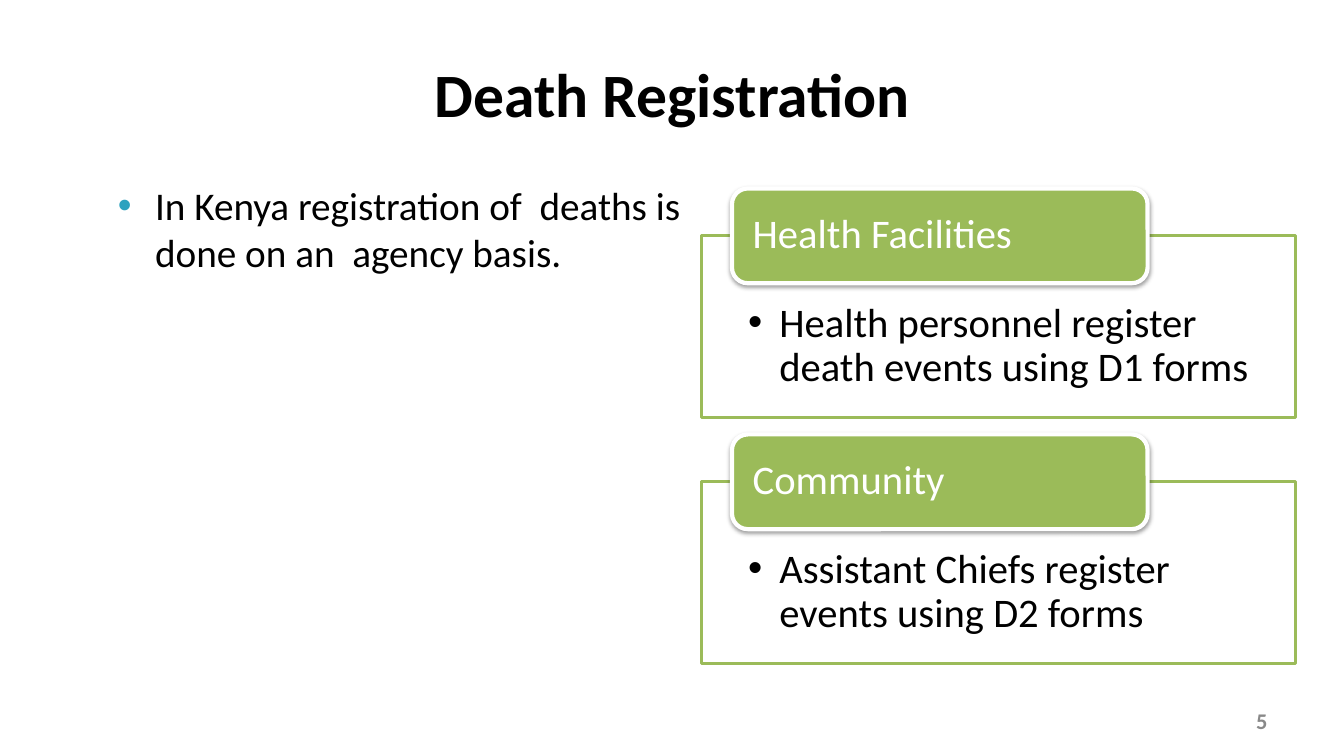
from lxml import etree
from pptx import Presentation
from pptx.dml.color import RGBColor
from pptx.enum.shapes import MSO_SHAPE as SHAPE
from pptx.enum.text import MSO_ANCHOR as ANCHOR, PP_ALIGN as ALIGN
from pptx.oxml import parse_xml
from pptx.oxml.ns import nsdecls, qn
from pptx.util import Inches, Pt

COLORS = {"text": "000000", "bullet": "2DA2BF", "green": "9BBB59",
          "white": "FFFFFF", "number": "898989"}


def write(sp, text, size, color, bold=False, align=ALIGN.LEFT,
          anchor=ANCHOR.TOP, insets=(0.1, 0.05, 0.1, 0.05)):
    """Fill a shape with one formatted paragraph and return it."""
    tf = sp.text_frame
    tf.word_wrap = True
    tf.vertical_anchor = anchor
    tf.margin_left, tf.margin_top, tf.margin_right, tf.margin_bottom = map(Inches, insets)
    p = tf.paragraphs[0]
    p.alignment = align
    r = p.add_run()
    r.text = text
    r.font.name, r.font.size, r.font.bold = "Calibri", Pt(size), bold
    r.font.color.rgb = RGBColor.from_string(COLORS[color])
    return p


def add_bullet(p, indent, color):
    """Give a paragraph a hanging round bullet."""
    pPr = p._p.get_or_add_pPr()
    pPr.set("marL", str(Inches(indent)))
    pPr.set("indent", str(-Inches(indent)))
    clr = etree.SubElement(pPr, qn("a:buClr"))
    etree.SubElement(clr, qn("a:srgbClr"), val=COLORS[color])
    etree.SubElement(pPr, qn("a:buFont"), typeface="Arial")
    etree.SubElement(pPr, qn("a:buChar"), char="•")


prs = Presentation()
prs.slide_width, prs.slide_height = Inches(13.33), Inches(7.5)
s = prs.slides.add_slide(prs.slide_layouts[5])

# Title
title = s.shapes.title
title.left, title.top, title.width, title.height = map(Inches, (0.67, 0.3, 12, 1.25))
write(title, "Death Registration", 44, "text", True, ALIGN.CENTER, ANCHOR.MIDDLE)

# Left column
COL_W = 5.89
LEFT_X, RIGHT_X = 1.07, 1.07 + COL_W
body = s.shapes.add_textbox(*map(Inches, (LEFT_X, 1.75, COL_W, 4.95)))
p = write(body, "In Kenya registration of  deaths is done on an  agency basis.", 28, "text")
add_bullet(p, 0.37, "bullet")

# Right column: a framed note under each heading tab
TOP, ROW_H = 1.87, 2.44
TAB_H, FRAME_H = 0.94, 1.8
agencies = [
    ("Health Facilities", "Health personnel register death events using D1 forms"),
    ("Community", "Assistant Chiefs register events using D2 forms"),
]
for row, (heading, note) in enumerate(agencies):
    y = TOP + row * ROW_H
    frame = s.shapes.add_shape(
        SHAPE.RECTANGLE, *map(Inches, (RIGHT_X, y + TAB_H / 2, COL_W, FRAME_H)))
    tab = s.shapes.add_shape(
        SHAPE.ROUNDED_RECTANGLE,
        *map(Inches, (RIGHT_X + 0.3, y, COL_W * 0.7, TAB_H)))
    for sp, fill, line, width in ((frame, "white", "green", 2), (tab, "green", "white", 3)):
        sp.shadow.inherit = False
        sp.fill.solid()
        sp.fill.fore_color.rgb = RGBColor.from_string(COLORS[fill])
        sp.line.color.rgb = RGBColor.from_string(COLORS[line])
        sp.line.width = Pt(width)

    p = write(frame, note, 29, "text", insets=(0.46, 0.66, 0.46, 0.23))
    add_bullet(p, 0.31, "text")
    p.line_spacing = 0.9
    p = write(tab, heading, 29, "white", anchor=ANCHOR.MIDDLE, insets=(0.16, 0, 0.16, 0))
    p.line_spacing = 0.9

    # Soft shadow below the tab
    effects = tab._element.spPr.find(qn("a:effectLst"))
    effects.append(parse_xml(
        f'<a:outerShdw {nsdecls("a")} blurRad="{Pt(3.1)}" dist="{Pt(1.6)}" '
        'dir="5400000" rotWithShape="0"><a:srgbClr val="000000">'
        '<a:alpha val="38000"/></a:srgbClr></a:outerShdw>'))

# Slide number
number = s.shapes.add_textbox(*map(Inches, (9.56, 6.95, 3.11, 0.4)))
write(number, "5", 16, "number", True, ALIGN.RIGHT, ANCHOR.MIDDLE)

prs.save("out.pptx")
